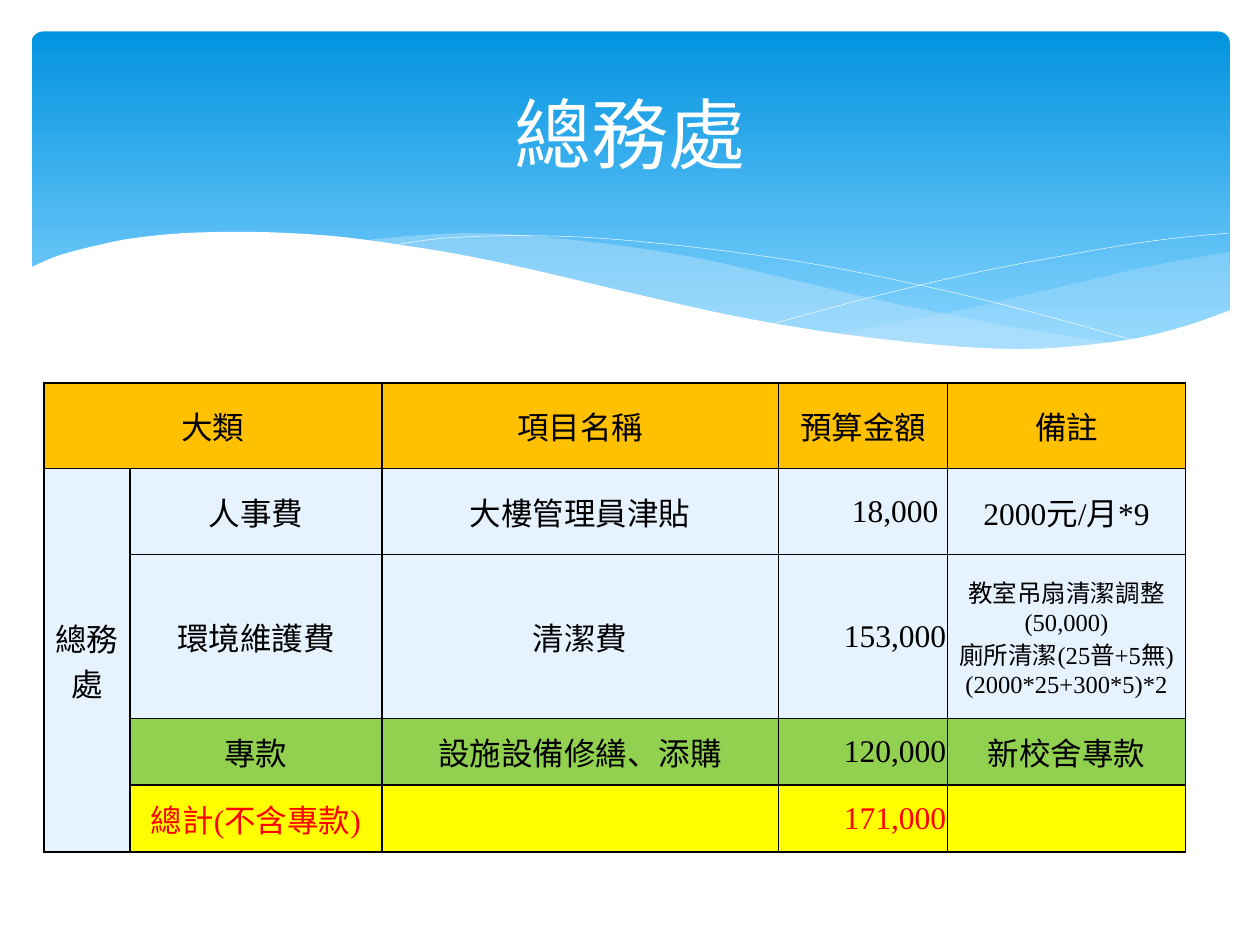
from dataclasses import dataclass

from lxml.etree import SubElement
from pptx import Presentation
from pptx.dml.color import RGBColor
from pptx.enum.shapes import MSO_SHAPE
from pptx.enum.text import MSO_ANCHOR, PP_ALIGN
from pptx.oxml.ns import qn
from pptx.util import Inches, Pt


@dataclass(frozen=True)
class Theme:
    white: str = "FFFFFF"
    black: str = "000000"
    red: str = "FF0000"
    banner_top: str = "0293E0"
    banner_bottom: str = "83D3FE"
    wave: str = "C6E7FC"
    header: str = "FFC000"
    regular: str = "E7F2FF"
    special: str = "92D050"
    total: str = "FFFF00"
    title_font: str = "Calibri"
    table_font: str = "Times New Roman"
    title_size: int = 44
    table_size: int = 18
    note_size: int = 14


THEME = Theme()

RIGHT_WAVE_TOP = [(9.76, 2), (9.35, 2.07), (8.91, 2.16), (8.32, 2.3),
                  (7.53, 2.48), (7.06, 2.57), (6.61, 2.65)]
RIGHT_WAVE_BOTTOM = [(6.61, 2.65), (7.05, 2.71), (7.57, 2.76), (8.03, 2.78),
                     (8.54, 2.76), (9.05, 2.69), (9.49, 2.57), (9.76, 2.47)]
MIDDLE_WAVE_TOP = [(8.93, 2.73), (8.07, 2.6), (7.06, 2.4), (6.29, 2.22),
                   (5.69, 2.08), (5.14, 1.98), (4.42, 1.89), (3.8, 1.85),
                   (3.28, 1.87), (2.86, 1.91)]
MIDDLE_WAVE_BOTTOM = [(2.86, 1.91), (3.42, 1.99), (4.04, 2.11), (4.91, 2.32),
                      (5.66, 2.48), (6.34, 2.61), (7.09, 2.72), (7.73, 2.77),
                      (8.28, 2.78), (8.93, 2.73)]
FALLING_LINE = [(3.09, 1.95), (3.53, 1.89), (4.16, 1.87), (4.89, 1.9),
                (5.82, 2), (6.65, 2.13), (7.6, 2.33), (8.31, 2.51), (9.07, 2.72)]
RISING_LINE = [(6.13, 2.57), (6.95, 2.35), (7.76, 2.16), (8.66, 1.99),
               (9.24, 1.9), (9.75, 1.85)]
WHITE_WAVE = [(9.77, 2.46), (9.4, 2.59), (8.99, 2.69), (8.5, 2.75),
              (8.09, 2.77), (7.61, 2.75), (7.08, 2.7), (6.47, 2.62),
              (5.79, 2.5), (5.03, 2.33), (4.18, 2.13), (3.65, 2.02),
              (3.16, 1.94), (2.71, 1.88), (2.3, 1.85), (1.93, 1.84),
              (1.46, 1.85), (1.06, 1.89), (0.76, 1.95), (0.46, 2.03), (0.23, 2.13)]

COLUMN_WIDTHS = [0.68, 2, 3.15, 1.34, 1.89]
ROW_HEIGHTS = [0.68, 0.68, 1.3, 0.53, 0.53]
BUDGET_ROWS = [
    ("大類", "", "項目名稱", "預算金額", "備註"),
    ("總務處", "人事費", "大樓管理員津貼", "18,000 ", "2000元/月*9"),
    ("", "環境維護費", "清潔費", "153,000",
     "教室吊扇清潔調整(50,000)\n廁所清潔(25普+5無)\n(2000*25+300*5)*2"),
    ("", "專款", "設施設備修繕、添購", "120,000", "新校舍專款"),
    ("", "總計(不含專款)", "", "171,000", ""),
]
AMOUNT_COLUMN = 3


def color(value):
    return RGBColor.from_string(value)


def write_text(text_frame, text, *, size, font, text_color, align=PP_ALIGN.CENTER):
    for index, line in enumerate(text.split("\n")):
        paragraph = text_frame.add_paragraph() if index else text_frame.paragraphs[0]
        paragraph.alignment = align
        run = paragraph.add_run()
        run.text = line
        run.font.size = Pt(size)
        run.font.name = font
        run.font.color.rgb = color(text_color)


def smooth_curve(points, steps=5):
    padded = [points[0], *points, points[-1]]
    curve = [points[0]]
    for a, b, c, d in zip(padded, padded[1:], padded[2:], padded[3:]):
        for step in range(1, steps + 1):
            t = step / steps
            curve.append(tuple(
                (2 * q + (r - p) * t + (2 * p - 5 * q + 4 * r - s) * t ** 2
                 + (3 * q - p - 3 * r + s) * t ** 3) / 2
                for p, q, r, s in zip(a, b, c, d)))
    return curve


def add_outline(slide, points, *, fill=None, opacity=100, line=None):
    start, *rest = [(Inches(x), Inches(y)) for x, y in points]
    builder = slide.shapes.build_freeform(*start)
    builder.add_line_segments(rest, close=fill is not None)
    shape = builder.convert_to_shape()
    shape.shadow.inherit = False
    if fill:
        shape.fill.solid()
        shape.fill.fore_color.rgb = color(fill)
        if opacity < 100:
            color_element = shape.element.spPr.find(qn("a:solidFill"))[0]
            SubElement(color_element, qn("a:alpha"), val=str(opacity * 1000))
    else:
        shape.fill.background()
    if line:
        shape.line.color.rgb = color(line)
        shape.line.width = Pt(0.25)
    else:
        shape.line.fill.background()


def add_banner(slide):
    banner = slide.shapes.add_shape(
        MSO_SHAPE.ROUNDED_RECTANGLE, Inches(0.25), Inches(0.25), Inches(9.51), Inches(2.7))
    banner.adjustments[0] = 0.034
    banner.shadow.inherit = False
    banner.line.fill.background()
    banner.fill.gradient()
    banner.fill.gradient_angle = 270
    stops = zip(banner.fill.gradient_stops, (0, 0.9),
                (THEME.banner_top, THEME.banner_bottom))
    for stop, position, value in stops:
        stop.position = position
        stop.color.rgb = color(value)


def add_waves(slide):
    for top, bottom, opacity in ((RIGHT_WAVE_TOP, RIGHT_WAVE_BOTTOM, 29),
                                 (MIDDLE_WAVE_TOP, MIDDLE_WAVE_BOTTOM, 40)):
        add_outline(slide, smooth_curve(top) + smooth_curve(bottom),
                    fill=THEME.wave, opacity=opacity)
    for points in (FALLING_LINE, RISING_LINE):
        add_outline(slide, smooth_curve(points), line=THEME.white)
    add_outline(slide, smooth_curve(WHITE_WAVE) + [(0.23, 3.29), (9.77, 3.29)],
                fill=THEME.white)


def set_title(slide, text):
    title = slide.shapes.title
    title.left, title.top = Inches(0.5), Inches(0.37)
    title.width, title.height = Inches(9), Inches(1.37)
    title.text_frame.vertical_anchor = MSO_ANCHOR.MIDDLE
    write_text(title.text_frame, text, size=THEME.title_size,
               font=THEME.title_font, text_color=THEME.white)
    title.element.getparent().append(title.element)


def format_cell(cell, fill):
    properties = cell._tc.get_or_add_tcPr()
    for side in ("lnL", "lnR", "lnT", "lnB"):
        border = SubElement(properties, qn(f"a:{side}"), w=str(Pt(1)))
        SubElement(SubElement(border, qn("a:solidFill")), qn("a:srgbClr"), val=THEME.black)
    cell.fill.solid()
    cell.fill.fore_color.rgb = color(fill)
    cell.vertical_anchor = MSO_ANCHOR.MIDDLE
    cell.margin_left = cell.margin_right = Inches(0.01)
    cell.margin_top = cell.margin_bottom = Inches(0.01)


def add_budget_table(slide):
    table = slide.shapes.add_table(
        len(ROW_HEIGHTS), len(COLUMN_WIDTHS), Inches(0.35), Inches(3.04),
        Inches(sum(COLUMN_WIDTHS)), Inches(sum(ROW_HEIGHTS))).table
    for column, width in zip(table.columns, COLUMN_WIDTHS):
        column.width = Inches(width)
    for row, height in zip(table.rows, ROW_HEIGHTS):
        row.height = Inches(height)
    table.cell(0, 0).merge(table.cell(0, 1))
    table.cell(1, 0).merge(table.cell(4, 0))

    row_fills = (THEME.header, THEME.regular, THEME.regular, THEME.special, THEME.total)
    for row_index, (texts, row_fill) in enumerate(zip(BUDGET_ROWS, row_fills)):
        for column_index, text in enumerate(texts):
            cell = table.cell(row_index, column_index)
            is_department = row_index > 0 and column_index == 0
            format_cell(cell, THEME.regular if is_department else row_fill)
            if not text:
                continue
            is_amount = row_index > 0 and column_index == AMOUNT_COLUMN
            is_total = row_fill == THEME.total
            write_text(cell.text_frame, text, font=THEME.table_font,
                       size=THEME.note_size if "\n" in text else THEME.table_size,
                       text_color=THEME.red if is_total else THEME.black,
                       align=PP_ALIGN.RIGHT if is_amount else PP_ALIGN.CENTER)


def main():
    presentation = Presentation()
    presentation.slide_width, presentation.slide_height = Inches(10), Inches(7.5)
    slide = presentation.slides.add_slide(presentation.slide_layouts[5])
    add_banner(slide)
    add_waves(slide)
    set_title(slide, "總務處")
    add_budget_table(slide)
    presentation.save("out.pptx")


if __name__ == "__main__":
    main()
